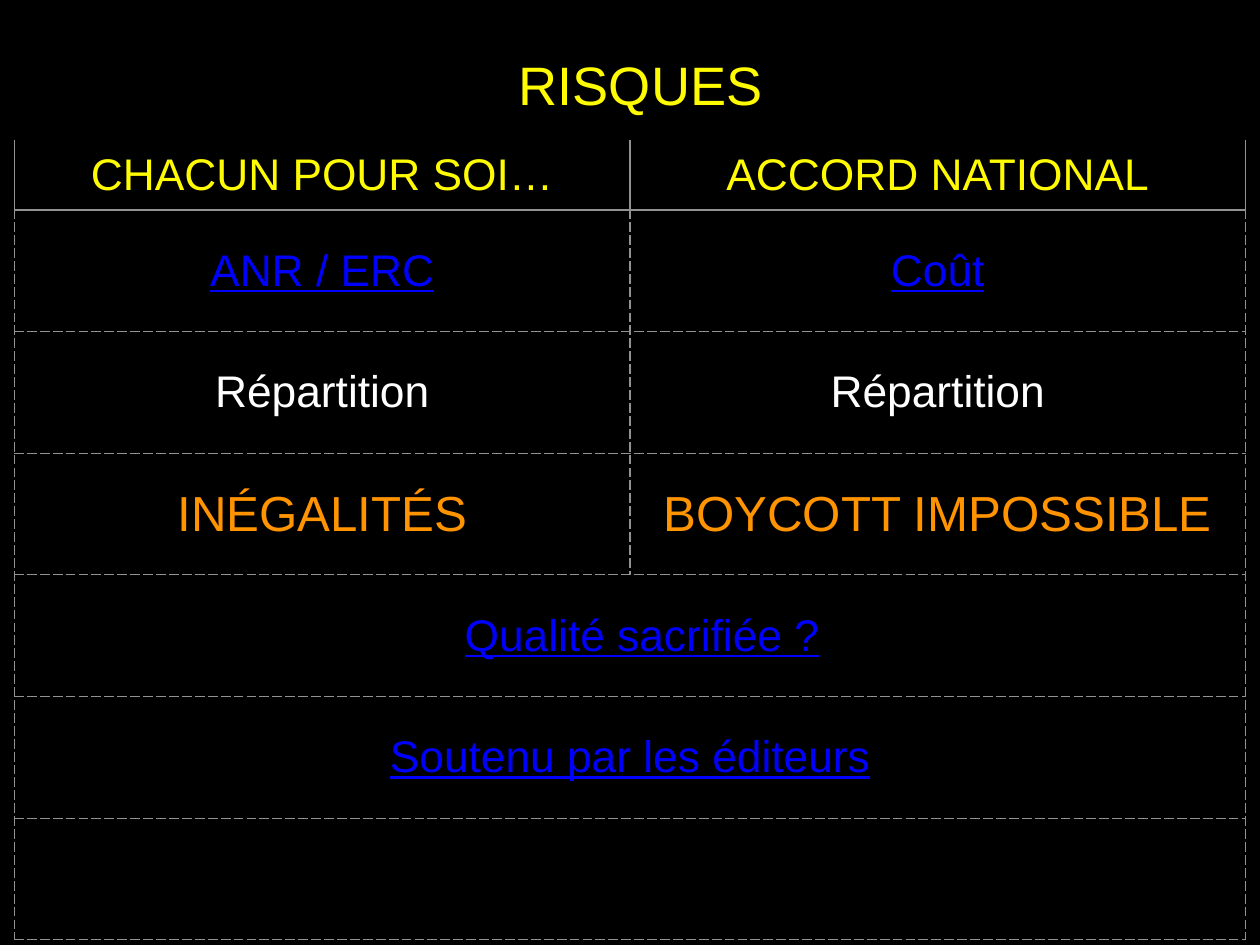
import dataclasses

import lxml.etree
import pptx
import pptx.dml.color
import pptx.enum.text
import pptx.oxml.ns
import pptx.util

RGB = pptx.dml.color.RGBColor.from_string
Inches = pptx.util.Inches


@dataclasses.dataclass(frozen=True)
class Theme:
    """Colours, type sizes and line widths of the slide."""
    font: str = "Arial"
    ground: str = "000000"
    heading: str = "FFFB00"
    plain: str = "FFFFFF"
    link: str = "0000FF"
    alert: str = "FF9300"
    rule: str = "929292"
    title_size: int = 44
    alert_size: int = 40
    text_size: int = 36
    thin: int = 1
    thick: int = 2


THEME = Theme()
STYLES = {
    "title": dict(size=THEME.title_size, color=THEME.heading),
    "heading": dict(size=THEME.text_size, color=THEME.heading),
    "link": dict(size=THEME.text_size, color=THEME.link, underline=True),
    "plain": dict(size=THEME.text_size, color=THEME.plain),
    "alert": dict(size=THEME.alert_size, color=THEME.alert),
}
RISKS = [
    ("heading", ["CHACUN POUR SOI…", "ACCORD NATIONAL"]),
    ("link", ["ANR / ERC", "Coût"]),
    ("plain", ["Répartition", "Répartition"]),
    ("alert", ["INÉGALITÉS", "BOYCOTT IMPOSSIBLE"]),
    ("link", ["Qualité sacrifiée ?"]),
    ("link", ["Soutenu par les éditeurs"]),
    ("plain", [""]),
]
INSET = 0.06
QUESTION_INDENT = 0.27
HEADER_SHARE = 0.0875


def write(tf, text, style):
    """Write one centred, styled paragraph into a text frame."""
    p = tf.paragraphs[0]
    p.alignment = pptx.enum.text.PP_ALIGN.CENTER
    look = dict(STYLES[style])
    color = look.pop("color")
    look.update(size=pptx.util.Pt(look["size"]), name=THEME.font, bold=False)
    r = p.add_run() if text else p
    if text:
        r.text = text
    for name, value in look.items():
        setattr(r.font, name, value)
    r.font.color.rgb = RGB(color)


def set_margins(target, left=INSET):
    """Set the insets of a cell or text frame."""
    margins = dict(left=left, top=INSET, right=INSET, bottom=INSET)
    for side, value in margins.items():
        setattr(target, f"margin_{side}", Inches(value))


def add_border(cell, side, width, dash):
    """Draw one side of a cell, or clear it when the width is zero."""
    ns = pptx.oxml.ns.qn
    sub = lxml.etree.SubElement
    ln = sub(cell._tc.get_or_add_tcPr(), ns(f"a:ln{side}"), w=str(pptx.util.Pt(width)))
    if not width:
        sub(ln, ns("a:noFill"))
        return
    sub(sub(ln, ns("a:solidFill")), ns("a:srgbClr"), val=THEME.rule)
    sub(ln, ns("a:prstDash"), val=dash)


def frame_cell(cell, row, col):
    """Give a cell its borders: solid around the header, dashed below."""
    thin, thick = THEME.thin, THEME.thick
    dash = "dash" if row else "solid"
    inner = thin if row else thick
    add_border(cell, "L", inner if col else thin, dash)
    add_border(cell, "R", thin if col else inner, dash)
    add_border(cell, "T", (0, thick)[row] if row < 2 else thin, "solid" if row < 2 else dash)
    add_border(cell, "B", inner, dash)


def add_title(s, text, box):
    """Place the slide title in its box."""
    sp = s.shapes.title
    for name, value in zip(("left", "top", "width", "height"), box):
        setattr(sp, name, Inches(value))
    tf = sp.text_frame
    set_margins(tf)
    tf.word_wrap = False
    tf.vertical_anchor = pptx.enum.text.MSO_ANCHOR.MIDDLE
    write(tf, text, "title")


def add_risk_table(s, rows, box):
    """Fill the box with a two-column table; single entries span both columns."""
    height = box[3]
    table = s.shapes.add_table(len(rows), 2, *map(Inches, box)).table
    table.first_row = table.horz_banding = False
    header = height * HEADER_SHARE
    body = (height - header) / (len(rows) - 1)
    for i, (style, texts) in enumerate(rows):
        table.rows[i].height = Inches(body if i else header)
        for j in range(2):
            cell = table.cell(i, j)
            frame_cell(cell, i, j)
            cell.fill.solid()
            cell.fill.fore_color.rgb = RGB(THEME.ground)
            cell.vertical_anchor = pptx.enum.text.MSO_ANCHOR.MIDDLE
            set_margins(cell, INSET + QUESTION_INDENT * texts[0].endswith("?"))
            if j < len(texts):
                write(cell.text_frame, texts[j], style)
        if len(texts) == 1:
            table.cell(i, 0).merge(table.cell(i, 1))


def main():
    """Build the slide and save it."""
    prs = pptx.Presentation()
    width, height = 14.22, 10.67
    prs.slide_width, prs.slide_height = Inches(width), Inches(height)
    s = prs.slides.add_slide(prs.slide_layouts[5])
    s.background.fill.solid()
    s.background.fill.fore_color.rgb = RGB(THEME.ground)
    add_title(s, "RISQUES", (width * 0.4, height * 0.052, width * 0.217, height * 0.074))
    add_risk_table(s, RISKS, (width * 0.0115, height * 0.1485, width * 0.977, height * 0.846))
    prs.save("out.pptx")


if __name__ == "__main__":
    main()
